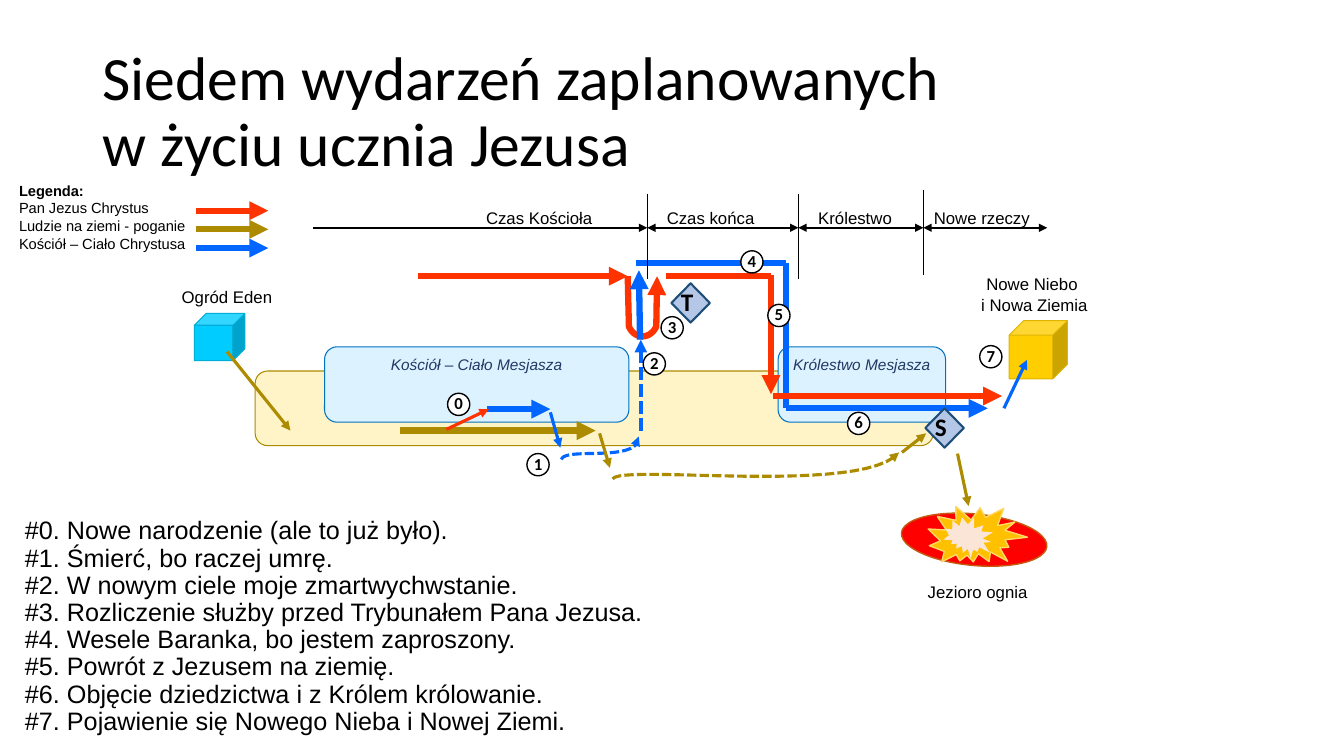
"""Builds a timeline slide of seven events planned in the life of a disciple."""
from dataclasses import dataclass

from pptx import Presentation
from pptx.dml.color import RGBColor
from pptx.enum.dml import MSO_LINE
from pptx.enum.shapes import MSO_CONNECTOR, MSO_SHAPE
from pptx.enum.text import MSO_ANCHOR, PP_ALIGN
from pptx.oxml.ns import qn
from pptx.util import Cm, Pt
from lxml.etree import SubElement


@dataclass(frozen=True)
class Theme:
    sans: str = "Arial"
    heading: str = "Calibri"
    black: str = "000000"
    white: str = "FFFFFF"
    navy: str = "203864"
    red: str = "FF3300"
    gold: str = "AD8B00"
    blue: str = "0066FF"
    sand: str = "FFF4C7"
    sky: str = "DDF2FF"
    sky_edge: str = "0070C0"
    diamond: str = "B4C7E7"
    diamond_edge: str = "1F4E79"
    lake: str = "FF0000"
    lake_edge: str = "C55A11"
    flame: str = "FFC000"
    flame_edge: str = "FFD966"
    glow: str = "FBE5D6"
    new_earth: str = "FFCE00"
    new_earth_edge: str = "E0B400"
    eden: str = "00CCFF"
    eden_edge: str = "00AED8"
    title_size: float = 44
    body_size: float = 18
    label_size: float = 12
    area_size: float = 11
    legend_size: float = 10.5
    thick: float = 4.5
    dashed: float = 3
    thin: float = 2.25


class Diagram:
    def __init__(self, page, theme):
        self.page = page
        self.theme = theme

    def style_text(self, paragraph, size, color=None, font=None, align=PP_ALIGN.LEFT,
                   bold=False, italic=False, spacing=None):
        paragraph.alignment = align
        paragraph.line_spacing = spacing
        paragraph.font.size = Pt(size)
        paragraph.font.name = font or self.theme.sans
        paragraph.font.bold = bold
        paragraph.font.italic = italic
        paragraph.font.color.rgb = RGBColor.from_string(color or self.theme.black)

    def title(self, text, left, top, width, height):
        box = self.page.shapes.title
        box.left, box.top, box.width, box.height = map(Cm, (left, top, width, height))
        box.text_frame.vertical_anchor = MSO_ANCHOR.MIDDLE
        paragraph = box.text_frame.paragraphs[0]
        paragraph.text = text
        self.style_text(paragraph, self.theme.title_size, font=self.theme.heading, spacing=0.9)

    def text_box(self, lines, left, top, width, height, size, spacing=None, bold_first=False):
        box = self.page.shapes.add_textbox(*map(Cm, (left, top, width, height)))
        frame = box.text_frame
        frame.word_wrap = True
        frame.text = "\n".join(lines)
        for index, paragraph in enumerate(frame.paragraphs):
            self.style_text(paragraph, size, bold=bold_first and index == 0, spacing=spacing)

    def label(self, text, left, top, width=3.66, height=0.66):
        box = self.page.shapes.add_textbox(*map(Cm, (left, top, width, height)))
        frame = box.text_frame
        frame.word_wrap = True
        frame.vertical_anchor = MSO_ANCHOR.MIDDLE
        frame.margin_left = frame.margin_right = frame.margin_top = frame.margin_bottom = Cm(0.08)
        frame.paragraphs[0].text = text
        self.style_text(frame.paragraphs[0], self.theme.label_size, align=PP_ALIGN.CENTER)

    def shape(self, kind, left, top, width, height, fill, edge=None, weight=0.75, rotation=0):
        shape = self.page.shapes.add_shape(kind, *map(Cm, (left, top, width, height)))
        shape.shadow.inherit = False
        shape.rotation = rotation
        shape.fill.solid()
        shape.fill.fore_color.rgb = RGBColor.from_string(fill)
        if edge:
            shape.line.color.rgb = RGBColor.from_string(edge)
            shape.line.width = Pt(weight)
        else:
            shape.line.fill.background()
        return shape

    def area(self, text, left, top, width, height):
        shape = self.shape(MSO_SHAPE.ROUNDED_RECTANGLE, left, top, width, height,
                           self.theme.sky, self.theme.sky_edge)
        frame = shape.text_frame
        frame.word_wrap = False
        frame.vertical_anchor = MSO_ANCHOR.TOP
        frame.text = text
        self.style_text(frame.paragraphs[0], self.theme.area_size, self.theme.navy,
                        align=PP_ALIGN.CENTER, italic=True)

    def judgement(self, letter, left, top):
        shape = self.shape(MSO_SHAPE.DIAMOND, left, top, 0.97, 0.99,
                           self.theme.diamond, self.theme.diamond_edge, 1.5)
        frame = shape.text_frame
        frame.margin_left = frame.margin_right = 0
        frame.margin_top = frame.margin_bottom = Cm(0.1)
        frame.text = letter
        self.style_text(frame.paragraphs[0], self.theme.body_size, font=self.theme.heading,
                        bold=True, spacing=0.9)

    def event(self, number, left, top):
        shape = self.shape(MSO_SHAPE.OVAL, left, top, 0.56, 0.56,
                           self.theme.white, self.theme.black, 1)
        frame = shape.text_frame
        frame.word_wrap = False
        frame.text = str(number)
        self.style_text(frame.paragraphs[0], self.theme.label_size, font=self.theme.heading,
                        align=PP_ALIGN.CENTER, bold=True, spacing=0.9)

    def stroke(self, shape, color, weight, ends, dash):
        shape.line.color.rgb = RGBColor.from_string(color)
        shape.line.width = Pt(weight)
        if dash:
            shape.line.dash_style = MSO_LINE.SQUARE_DOT
        outline = shape.element.spPr.find(qn("a:ln"))
        for end in ends:
            SubElement(outline, qn(f"a:{end}"), type="triangle")

    def line(self, start, finish, color, weight, ends=("tailEnd",), dash=False):
        connector = self.page.shapes.add_connector(
            MSO_CONNECTOR.STRAIGHT, *map(Cm, (*start, *finish)))
        self.stroke(connector, color, weight, ends, dash)
        SubElement(connector.element.spPr, qn("a:effectLst"))

    def curve(self, controls, color, weight, before=(), after=(), dash=False, steps=24):
        bend = []
        for step in range(steps + 1):
            t = step / steps
            weights = ((1 - t) ** 3, 3 * t * (1 - t) ** 2, 3 * t ** 2 * (1 - t), t ** 3)
            bend.append(tuple(sum(w * point[axis] for w, point in zip(weights, controls))
                              for axis in (0, 1)))
        points = [(Cm(x), Cm(y)) for x, y in (*before, *bend, *after)]
        builder = self.page.shapes.build_freeform(*points[0])
        builder.add_line_segments(points[1:], close=False)
        shape = builder.convert_to_shape()
        shape.shadow.inherit = False
        shape.fill.background()
        self.stroke(shape, color, weight, ("tailEnd",), dash)


def main():
    deck = Presentation()
    deck.slide_width, deck.slide_height = Cm(33.87), Cm(19.05)
    theme = Theme()
    diagram = Diagram(deck.slides.add_slide(deck.slide_layouts[5]), theme)
    red, gold, blue, black = theme.red, theme.gold, theme.blue, theme.black
    thick, thin = theme.thick, theme.thin

    diagram.title("Siedem wydarzeń zaplanowanych\vw życiu ucznia Jezusa", 2.33, 1.02, 29.21, 3.68)
    diagram.shape(MSO_SHAPE.ROUNDED_RECTANGLE, 6.43, 9.35, 17.09, 1.88, theme.sand, gold)
    diagram.area("Królestwo Mesjasza", 19.61, 8.74, 4.22, 1.9)
    diagram.area("Kościół – Ciało Mesjasza", 8.18, 8.74, 7.67, 1.9)

    diagram.line((10.08, 10.85), (15.01, 10.85), gold, thick)
    diagram.line((10.54, 6.96), (15.82, 6.96), red, thick)
    diagram.line((12.27, 10.31), (13.87, 10.31), blue, thick)
    diagram.line((16.03, 6.63), (19.81, 6.63), blue, thick, ends=())
    diagram.curve(((15.85, 8.23), (16, 8.56), (16.38, 8.56), (16.54, 8.23)), red, thick,
                  before=[(15.82, 6.96)], after=[(16.56, 6.96)])
    diagram.line((19.43, 6.93), (19.43, 9.93), red, thick)
    diagram.line((16.79, 6.96), (19.43, 6.96), red, thick, ends=())
    diagram.line((19.81, 6.63), (19.81, 10.29), blue, thick, ends=())
    diagram.line((19.48, 9.98), (25.25, 9.98), red, thick)
    diagram.line((19.81, 10.29), (24.89, 10.29), blue, thick)
    diagram.curve(((14.15, 11.58), (14.22, 11.25), (16.13, 11.68), (16.1, 11)), blue, thin, dash=True)
    diagram.line((16.13, 8.56), (16.1, 6.81), blue, thick)
    diagram.line((16.15, 10.85), (16.15, 8.56), blue, theme.dashed, dash=True)

    borders = (7.9, 16.31, 20.12, 23.27, 26.39)
    for index, (start, finish) in enumerate(zip(borders, borders[1:])):
        ends = ("headEnd", "tailEnd") if index else ("tailEnd",)
        diagram.line((start, 5.74), (finish, 5.74), black, 1.5, ends)
    for border, top in zip(borders[1:4], (4.88, 4.88, 4.78)):
        diagram.line((border, top), (border, top + 2.16), black, 0.5, ends=())
    for era, left, width in (("Czas Kościoła", 11.76, 3.66), ("Czas końca", 16.46, 2.9),
                             ("Królestwo", 20.37, 2.36), ("Nowe rzeczy", 23.27, 2.95)):
        diagram.label(era, left, 5.16, width)

    diagram.curve(((15.44, 12.07), (15.62, 11.68), (21.77, 12.5), (22.66, 11.4)), gold, thin, dash=True)
    diagram.line((22.73, 11.4), (23.34, 10.92), gold, thin)
    diagram.line((15.11, 10.92), (15.37, 11.79), gold, thin)
    diagram.line((13.87, 10.39), (14.12, 11.28), blue, thin)
    diagram.judgement("T", 16.92, 7.14)
    diagram.judgement("S", 23.32, 10.29)
    diagram.line((24.13, 11.43), (24.41, 12.75), gold, thin)

    diagram.label("Jezioro ognia", 22.81, 14.58)
    diagram.shape(MSO_SHAPE.FLOWCHART_CONNECTOR, 22.71, 12.95, 3.68, 1.3,
                  theme.lake, theme.lake_edge, 1, 5.4)
    diagram.shape(MSO_SHAPE.EXPLOSION2, 23.39, 12.65, 2.46, 1.73,
                  theme.flame, theme.flame_edge, 1, 16.2)
    diagram.shape(MSO_SHAPE.EXPLOSION2, 23.83, 12.98, 1.19, 1.14, theme.glow, rotation=56.2)

    diagram.shape(MSO_SHAPE.CUBE, 25.43, 8.08, 1.47, 1.47, theme.new_earth, theme.new_earth_edge)
    diagram.line((25.3, 10.29), (25.88, 9.07), blue, thin)
    diagram.shape(MSO_SHAPE.CUBE, 4.9, 7.9, 1.27, 1.19, theme.eden, theme.eden_edge)
    diagram.line((11.25, 10.82), (12.32, 10.31), red, thin)
    diagram.line((5.72, 8.86), (7.32, 10.85), gold, thin)
    event_places = ((11.28, 9.91), (13.28, 11.43), (16.21, 8.89), (16.66, 7.98),
                    (18.67, 6.32), (19.35, 7.67), (21.36, 10.39), (24.69, 8.71))
    for number, place in enumerate(event_places):
        diagram.event(number, *place)

    events = ("Nowe narodzenie (ale to już było).", "Śmierć, bo raczej umrę.",
              "W nowym ciele moje zmartwychwstanie.",
              "Rozliczenie służby przed Trybunałem Pana Jezusa.",
              "Wesele Baranka, bo jestem zaproszony.", "Powrót z Jezusem na ziemię.",
              "Objęcie dziedzictwa i z Królem królowanie.",
              "Pojawienie się Nowego Nieba i Nowej Ziemi.")
    diagram.text_box([f"#{number}. {event}" for number, event in enumerate(events)],
                     0.38, 12.93, 21.89, 5.66, theme.body_size, spacing=0.9)
    for row, color in enumerate((red, gold, blue)):
        height = 5.31 + 0.47 * row
        diagram.line((4.93, height), (6.76, height), color, thick)
    diagram.text_box(("Legenda:", "Pan Jezus Chrystus", "Ludzie na ziemi - poganie",
                      "Kościół – Ciało Chrystusa"),
                     0.23, 4.45, 5.05, 2.06, theme.legend_size, bold_first=True)
    diagram.label("Ogród Eden", 3.89, 7.16)
    diagram.label("Nowe Niebo\v i Nowa Ziemia", 24.18, 6.83, height=1.17)
    deck.save("out.pptx")


if __name__ == "__main__":
    main()
